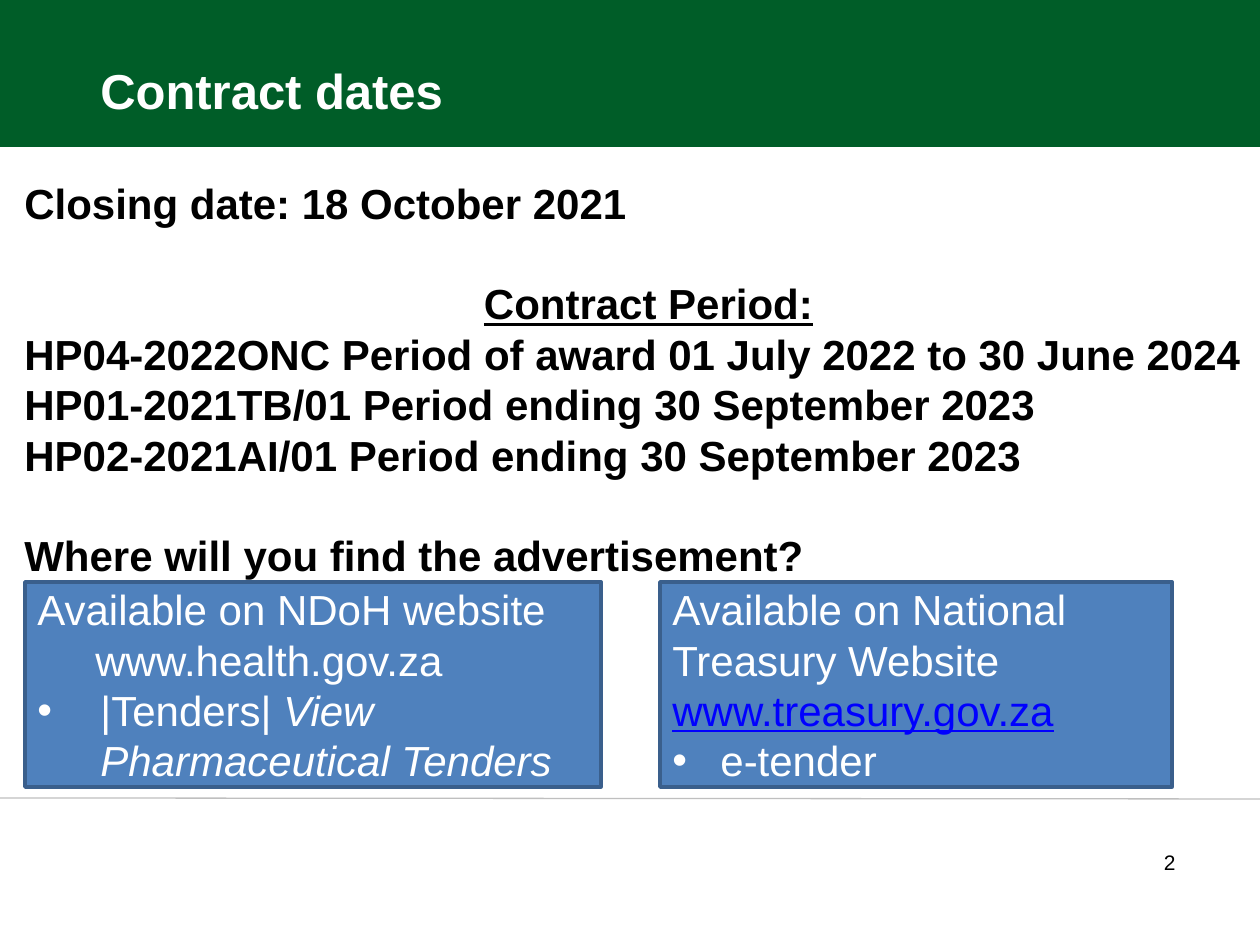
from pptx import Presentation
from pptx import util as u
from pptx.dml.color import RGBColor
from pptx.enum import shapes, text
from pptx.oxml.ns import qn
from lxml import etree

EMU_PER_PX = 914400 / 126
WIDTH, HEIGHT = 1260, 945
BLANK_LINE = 28.75


def px(length):
    return u.Emu(round(length * EMU_PER_PX))


def color(hex_string):
    return RGBColor.from_string(hex_string)


def add_box(page, left, top, width, height, anchor):
    box = page.shapes.add_textbox(px(left), px(top), px(width), px(height))
    box.text_frame.word_wrap = True
    box.text_frame.vertical_anchor = anchor
    return box


def add_rectangle(page, left, top, width, height, fill):
    shape = page.shapes.add_shape(
        shapes.MSO_SHAPE.RECTANGLE, px(left), px(top), px(width), px(height))
    shape.shadow.inherit = False
    shape.fill.solid()
    shape.fill.fore_color.rgb = color(fill)
    shape.line.fill.background()
    return shape


def add_para(frame, first, align=text.PP_ALIGN.LEFT, before=0, margin=0, bullet=False):
    """Return the frame's first paragraph or a new one, laid out as asked."""
    para = frame.paragraphs[0] if first else frame.add_paragraph()
    para.alignment = align
    if before:
        para.space_before = u.Pt(before)
    if margin:
        properties = para._p.get_or_add_pPr()
        properties.set("marL", str(px(margin)))
        if bullet:
            properties.set("indent", str(-px(margin)))
            etree.SubElement(properties, qn("a:buFont")).set("typeface", "Arial")
            etree.SubElement(properties, qn("a:buChar")).set("char", "•")
    return para


def add_span(para, words, size=24, fill="000000", bold=False, italic=False, underline=False):
    span = para.add_run()
    span.text = words
    font = span.font
    font.name, font.size, font.color.rgb = "Arial", u.Pt(size), color(fill)
    font.bold, font.italic, font.underline = bold, italic, underline


def add_header(page, left, top, width, height, title):
    add_rectangle(page, left, top, width, height, "005D28")
    box = add_box(page, left + 88, top - 10, 766, 136, text.MSO_ANCHOR.BOTTOM)
    para = add_para(box.text_frame, True)
    add_span(para, title, 28, "FFFFFF", bold=True)


def add_dates(page, left, top, width, height):
    center = text.PP_ALIGN.CENTER
    lines = [
        ("Closing date: 18 October 2021", {}, False),
        ("Contract Period:", {"align": center, "before": BLANK_LINE}, True),
        ("HP04-2022ONC Period of award 01 July 2022 to 30 June 2024", {}, False),
        ("HP01-2021TB/01 Period ending 30 September 2023", {}, False),
        ("HP02-2021AI/01 Period ending 30 September 2023", {}, False),
        ("Where will you find the advertisement?", {"before": BLANK_LINE}, False),
    ]
    box = add_box(page, left, top, width, height, text.MSO_ANCHOR.TOP)
    for number, (words, layout, underline) in enumerate(lines):
        para = add_para(box.text_frame, number == 0, **layout)
        add_span(para, words, bold=True, underline=underline)


def add_website(page, left, top, width, height, lines):
    """Draw a blue panel; each line is a paragraph layout and its spans."""
    panel = add_rectangle(page, left, top, width, height, "4F81BD")
    panel.line.color.rgb = color("3A5F8C")
    panel.line.width = u.Pt(2)
    frame = panel.text_frame
    frame.word_wrap = True
    frame.vertical_anchor = text.MSO_ANCHOR.MIDDLE
    for number, (layout, spans) in enumerate(lines):
        para = add_para(frame, number == 0, **layout)
        for words, style in spans:
            add_span(para, words, **{"fill": "FFFFFF", **style})


def add_footer(page, left, top, width, number):
    rule = page.shapes.add_connector(
        shapes.MSO_CONNECTOR.STRAIGHT, px(left), px(top), px(left + width), px(top + 1))
    rule.line.color.rgb = color("BFBFBF")
    rule.line.width = u.Pt(0.75)
    etree.SubElement(rule._element.spPr, qn("a:effectLst"))
    box = add_box(page, left + 1088, top + 44, 100, 40, text.MSO_ANCHOR.MIDDLE)
    para = add_para(box.text_frame, True, text.PP_ALIGN.RIGHT)
    add_span(para, number, 12)


def main():
    deck = Presentation()
    deck.slide_width, deck.slide_height = px(WIDTH), px(HEIGHT)
    page = deck.slides.add_slide(deck.slide_layouts[6])
    add_header(page, 0, 0, WIDTH, 147, "Contract dates")
    add_footer(page, 0, 798, WIDTH, "2")
    add_dates(page, 12, 171, 1273, 572)
    add_website(page, 25, 582, 576, 205, [
        ({}, [("Available on NDoH website", {})]),
        ({"margin": 58}, [("www.health.gov.za", {})]),
        ({"margin": 63, "bullet": True},
         [("|Tenders| ", {}), ("View Pharmaceutical Tenders", {"italic": True})]),
    ])
    add_website(page, 660, 582, 512, 205, [
        ({}, [("Available on National Treasury Website", {})]),
        ({}, [("www.treasury.gov.za", {"fill": "0000FF", "underline": True})]),
        ({"margin": 48, "bullet": True}, [("e-tender", {})]),
    ])
    deck.save("out.pptx")


if __name__ == "__main__":
    main()
